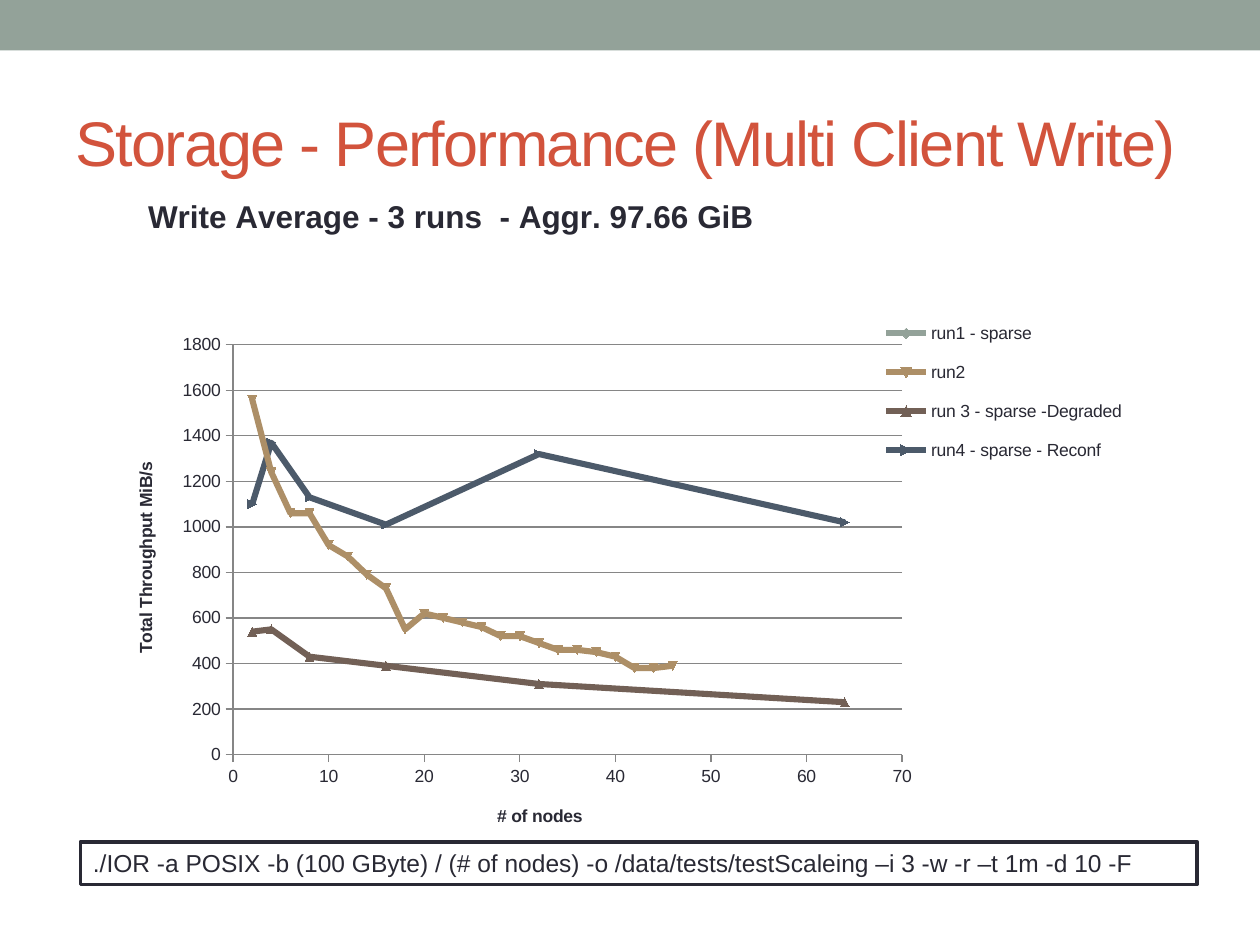
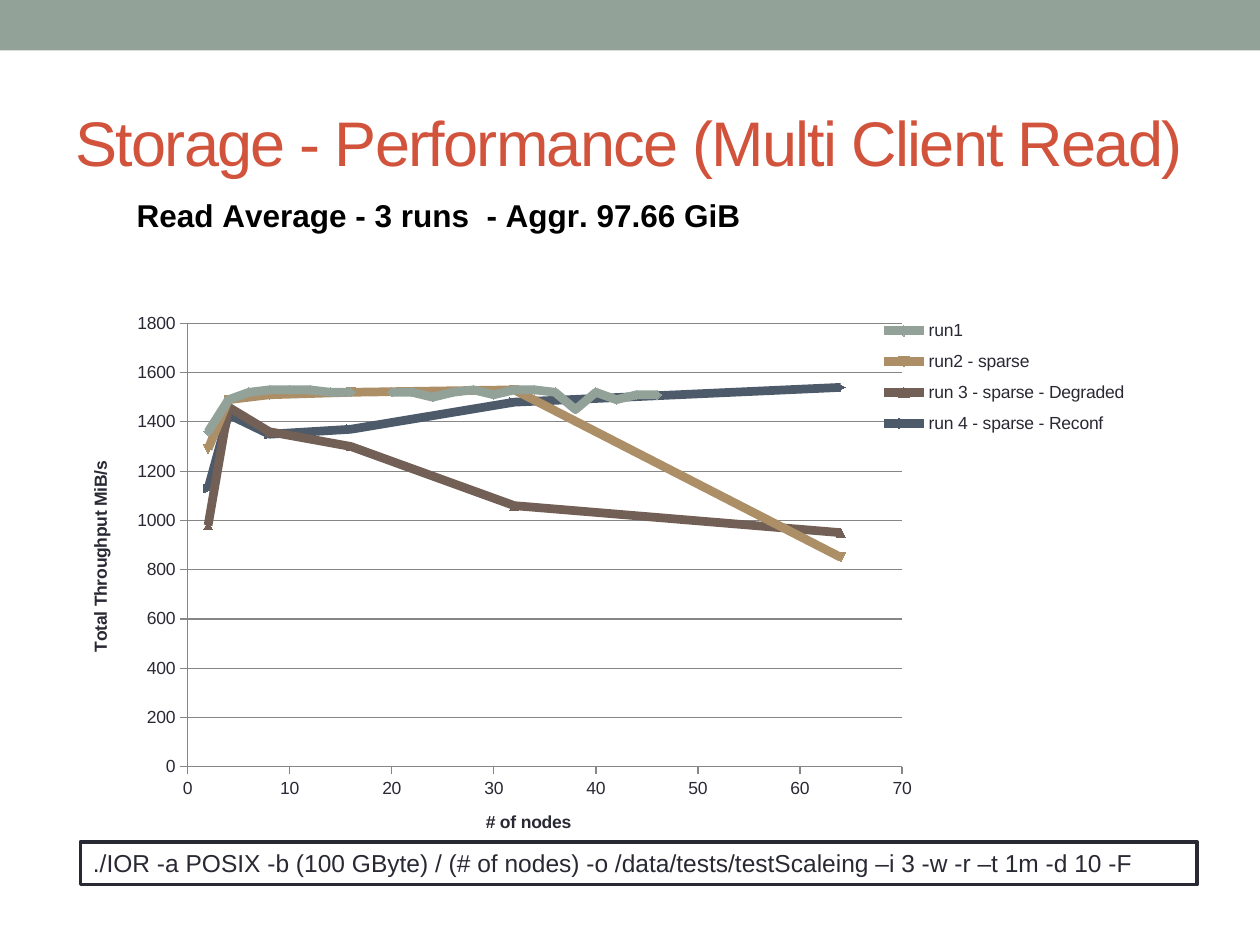
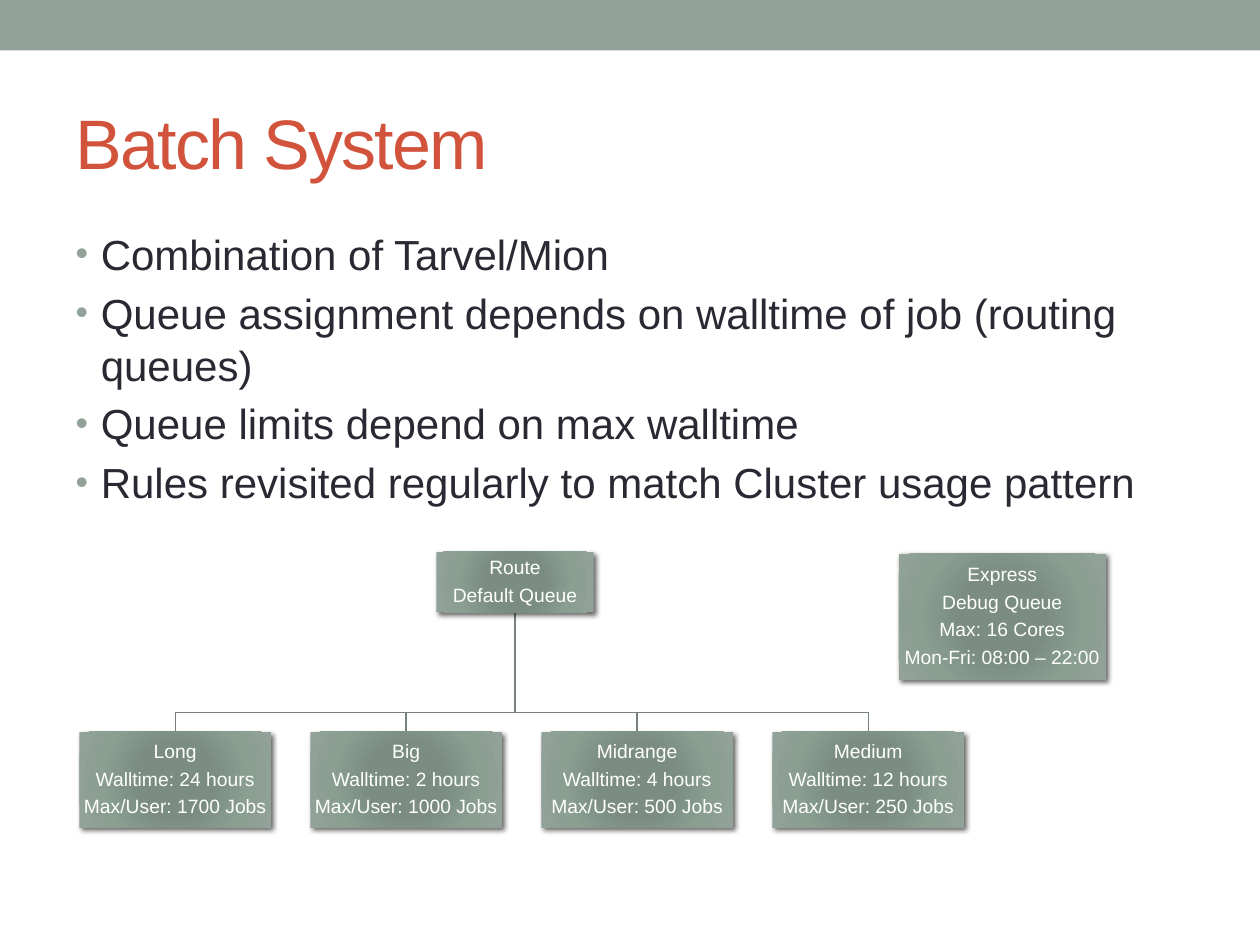
from dataclasses import dataclass

from pptx import Presentation
from pptx.chart.data import XyChartData
from pptx.dml.color import RGBColor as RGB
from pptx.enum.chart import XL_CHART_TYPE as KIND, XL_LEGEND_POSITION as SPOT
from pptx.enum.chart import XL_TICK_MARK as TICK
from pptx.enum.shapes import MSO_SHAPE as SHAPE
from pptx.enum.text import MSO_ANCHOR as ANCHOR, MSO_AUTO_SIZE as FIT, PP_ALIGN as ALIGN
from pptx.oxml import parse_xml
from pptx.oxml.ns import nsdecls, qn
from pptx.util import Pt


@dataclass(frozen=True)
class Theme:
    face: str = "Arial"
    sage: str = "93A299"
    tan: str = "AD8F67"
    brown: str = "726056"
    slate: str = "4C5A6A"
    rust: str = "D2533C"
    ink: str = "292934"
    black: str = "000000"
    white: str = "FFFFFF"
    grid: str = "868686"
    link: str = "76827B"
    list: int = 24
    head: int = 18
    note: int = 14
    node: int = 11
    axis: int = 10


T = Theme()


def style(font, color, size, bold=False):
    font.color.rgb = RGB.from_string(color)
    for key, val in {"name": T.face, "size": Pt(size), "bold": bold}.items():
        setattr(font, key, val)


def place(host, spot, box):
    """Give a chart part a manual layout, as fractions of the chart."""
    for old in host.findall(qn("c:layout")):
        host.remove(old)
    target = '<c:layoutTarget val="inner"/>' if spot == 0 else ""
    modes = '<c:xMode val="edge"/><c:yMode val="edge"/>'
    sides = "".join(f'<c:{k} val="{v}"/>' for k, v in zip("xywh", box))
    host.insert(spot, parse_xml(
        f'<c:layout {nsdecls("c")}><c:manualLayout>{target}{modes}{sides}'
        "</c:manualLayout></c:layout>"))


prs = Presentation()
prs.slide_width, prs.slide_height = Pt(720), Pt(540)

# Slides and titles
titles = [
    ("Storage - Performance (Multi Client Write)", 36, 5),
    ("Storage - Performance (Multi Client Read)", 36, 5),
    ("Batch System", 40, 1),
]
for text, size, layout in titles:
    slide = prs.slides.add_slide(prs.slide_layouts[layout])
    title = slide.shapes.title
    title.left, title.top, title.width, title.height = Pt(36), Pt(42), Pt(648), Pt(78)
    frame = title.text_frame
    frame.text = text
    frame.auto_size, frame.vertical_anchor = FIT.NONE, ANCHOR.MIDDLE
    para = frame.paragraphs[0]
    para.alignment = ALIGN.LEFT
    style(para.runs[0].font, T.rust, size)
    para.runs[0].font._element.set("spc", "-100")

# Top band, shared through the master
band = prs.slides[0].shapes.add_shape(SHAPE.RECTANGLE, 0, 0, Pt(720), Pt(28.8))
band.shadow.inherit = False
band.fill.solid()
band.fill.fore_color.rgb = RGB.from_string(T.sage)
band.line.fill.background()
prs.slide_master.shapes._spTree.insert(2, band._element)

# Throughput charts
sparse = [2, 4, 8, 16, 32, 64]
dense = range(2, 48, 2)
hues = [T.sage, T.tan, T.brown, T.slate]
charts = [
    {
        "title": "Write Average - 3 runs  - Aggr. 97.66 GiB",
        "color": T.ink, "top": 108.7, "width": 3.5,
        "plot": (0.15, 0.23, 0.59, 0.61), "legend": (0.7, 0.17, 0.26, 0.26),
        "head": (0.07, 0), "x": (0.38, 0.91), "y": (0.06, 0.4),
        "runs": {
            "run1 - sparse": [None] * len(sparse),
            "run2": [1560, 1240, 1060, 1060, 920, 870, 790, 730, 550, 620, 600, 580,
                     560, 520, 520, 490, 460, 460, 450, 430, 380, 380, 390],
            "run 3 - sparse -Degraded": [540, 550, 430, 390, 310, 230],
            "run4 - sparse - Reconf": [1100, 1370, 1130, 1010, 1320, 1020],
        },
    },
    {
        "title": "Read Average - 3 runs  - Aggr. 97.66 GiB",
        "color": T.black, "top": 108, "width": 5,
        "plot": (0.11, 0.2, 0.63, 0.66), "legend": (0.7, 0.18, 0.26, 0.2),
        "head": (0.06, 0), "x": (0.37, 0.92), "y": (0.02, 0.4),
        "runs": {
            "run1": [1360, 1490, 1520, 1530, 1530, 1530, 1520, 1520, None, 1520, 1520,
                     1500, 1520, 1530, 1510, 1530, 1530, 1520, 1450, 1520, 1490, 1510,
                     1510],
            "run2 - sparse": [1290, 1490, 1510, 1520, 1530, 850],
            "run 3 - sparse - Degraded": [980, 1460, 1360, 1300, 1060, 950],
            "run 4 - sparse - Reconf": [1130, 1430, 1350, 1370, 1480, 1540],
        },
    },
]
for slide, plan in zip(prs.slides, charts):
    data = XyChartData()
    for name, vals in plan["runs"].items():
        run = data.add_series(name)
        for x, y in zip(sparse if len(vals) == len(sparse) else dense, vals):
            run.add_data_point(x, y)
    chart = slide.shapes.add_chart(KIND.XY_SCATTER_LINES, Pt(36), Pt(plan["top"]),
                                   Pt(648), Pt(384), data).chart
    style(chart.font, T.ink, T.axis)

    for run, hue in zip(chart.plots[0].series, hues):
        run.smooth = False
        run.format.line.width = Pt(plan["width"])
        run.format.line.color.rgb = RGB.from_string(hue)
        run.marker.size = 5
        run.marker.format.fill.solid()
        run.marker.format.fill.fore_color.rgb = RGB.from_string(hue)
        run.marker.format.line.color.rgb = RGB.from_string(hue)
        for point in list(run._element.iter(qn("c:pt"))):
            if point.findtext(qn("c:v")) == "None":
                point.getparent().remove(point)
    chart.plots[0].vary_by_categories = False

    chart.has_title = True
    head = chart.chart_title
    head.text_frame.text = plan["title"]
    style(head.text_frame.paragraphs[0].runs[0].font, plan["color"], T.head, True)
    place(head._element, 1, plan["head"])

    axes = [(chart.category_axis, "# of nodes", "x", 70, 10),
            (chart.value_axis, "Total Throughput MiB/s", "y", 1800, 200)]
    for axis, text, side, top, step in axes:
        form = {"minimum_scale": 0, "maximum_scale": top, "major_unit": step,
                "major_tick_mark": TICK.OUTSIDE, "minor_tick_mark": TICK.NONE,
                "has_major_gridlines": side == "y"}
        for key, val in form.items():
            setattr(axis, key, val)
        axis.format.line.color.rgb = RGB.from_string(T.grid)
        label = axis.axis_title
        label.text_frame.text = text
        style(label.text_frame.paragraphs[0].runs[0].font, T.ink, T.axis, True)
        place(label._element, 1, plan[side])
        if side == "y":
            axis.major_gridlines.format.line.color.rgb = RGB.from_string(T.grid)
            turn = next(label._element.iter(qn("a:bodyPr")))
            turn.set("rot", "-5400000")
            turn.set("vert", "horz")

    chart.has_legend = True
    chart.legend.position = SPOT.RIGHT
    chart.legend.include_in_layout = False
    style(chart.legend.font, T.ink, T.axis)
    place(chart.legend._element, 1, plan["legend"])
    place(next(chart._chartSpace.iter(qn("c:plotArea"))), 0, plan["plot"])

    call = slide.shapes.add_shape(SHAPE.RECTANGLE, Pt(46), Pt(481), Pt(638), Pt(24.5))
    call.shadow.inherit = False
    call.fill.solid()
    call.fill.fore_color.rgb = RGB.from_string(T.white)
    call.line.color.rgb = RGB.from_string(T.ink)
    call.line.width = Pt(2.08)
    call.text_frame.text = ("./IOR -a POSIX -b (100 GByte) / (# of nodes) "
                            "-o /data/tests/testScaleing –i 3 -w -r –t 1m -d 10 -F")
    para = call.text_frame.paragraphs[0]
    para.alignment = ALIGN.LEFT
    style(para.runs[0].font, T.ink, T.note)

# Batch system list
slide = prs.slides[2]
body = slide.placeholders[1]
body.left, body.top, body.width, body.height = Pt(36), Pt(126), Pt(648), Pt(384)
body.text_frame.text = "\n".join([
    "Combination of Tarvel/Mion",
    "Queue assignment depends on walltime of job (routing queues)",
    "Queue limits depend on max walltime",
    "Rules revisited regularly to match Cluster usage pattern",
])
body.text_frame.auto_size = FIT.NONE
for para in body.text_frame.paragraphs:
    style(para.runs[0].font, T.ink, T.list)
    para.line_spacing, para.space_before = 1.03, Pt(4)
    props = para._p.get_or_add_pPr()
    props.set("marL", str(Pt(14.4)))
    props.set("indent", str(Pt(-14.4)))
    for mark in (f'<a:buClr {nsdecls("a")}><a:srgbClr val="{T.sage}"/></a:buClr>',
                 f'<a:buSzPct {nsdecls("a")} val="85000"/>',
                 f'<a:buFont {nsdecls("a")} typeface="{T.face}"/>',
                 f'<a:buChar {nsdecls("a")} char="•"/>'):
        props.append(parse_xml(mark))

# Queue tree
stops = [(0, "7B8E82"), (34, "7B8D83"), (70, "8A9E92"), (100, T.sage)]
glow = (f'<a:gradFill {nsdecls("a")} rotWithShape="1"><a:gsLst>'
        + "".join(f'<a:gs pos="{p * 1000}"><a:srgbClr val="{c}"/></a:gs>' for p, c in stops)
        + '</a:gsLst><a:path path="circle"><a:fillToRect l="100000" t="100000" '
        'r="100000" b="100000"/></a:path></a:gradFill>')
shade = (f'<a:effectLst {nsdecls("a")}><a:outerShdw blurRad="{Pt(3)}" dist="{Pt(2)}" '
         f'dir="2700000" rotWithShape="0"><a:srgbClr val="{T.black}">'
         '<a:alpha val="60000"/></a:srgbClr></a:outerShdw></a:effectLst>')

wide, high, row, pitch = 109.4, 54.7, 418.3, 132
root, base, bend = 294.3, 350, 407
leaves = [("Long", 24, 1700), ("Big", 2, 1000), ("Midrange", 4, 500), ("Medium", 12, 250)]
nodes = [
    (249.3, 315.4, 90, 34.6, ["Route", "Default Queue"]),
    (513.5, 316.4, 118.5, 72,
     ["Express", "Debug Queue", "Max: 16 Cores", "Mon-Fri: 08:00 – 22:00"]),
]
for i, (name, hours, jobs) in enumerate(leaves):
    left = 45.4 + i * pitch
    nodes.append((left, row, wide, high,
                  [name, f"Walltime: {hours} hours", f"Max/User: {jobs} Jobs"]))
    mid = left + wide / 2
    pen = slide.shapes.build_freeform(Pt(root), Pt(base))
    pen.add_line_segments([(Pt(root), Pt(bend)), (Pt(mid), Pt(bend)), (Pt(mid), Pt(row))],
                          close=False)
    branch = pen.convert_to_shape()
    branch.shadow.inherit = False
    branch.fill.background()
    branch.line.color.rgb = RGB.from_string(T.link)
    branch.line.width = Pt(0.75)

for left, top, width, height, lines in nodes:
    node = slide.shapes.add_shape(SHAPE.RECTANGLE, Pt(left), Pt(top), Pt(width), Pt(height))
    node.line.fill.background()
    node._element.spPr.insert(2, parse_xml(glow))
    node._element.spPr.append(parse_xml(shade))
    frame = node.text_frame
    frame.text = "\n".join(lines)
    form = {"vertical_anchor": ANCHOR.MIDDLE, "word_wrap": True}
    form.update((f"margin_{side}", Pt(0.7)) for side in ("left", "top", "right", "bottom"))
    for key, val in form.items():
        setattr(frame, key, val)
    for para in frame.paragraphs:
        style(para.runs[0].font, T.white, T.node)
        para.alignment, para.line_spacing, para.space_after = ALIGN.CENTER, 0.9, Pt(4)

prs.save("out.pptx")
